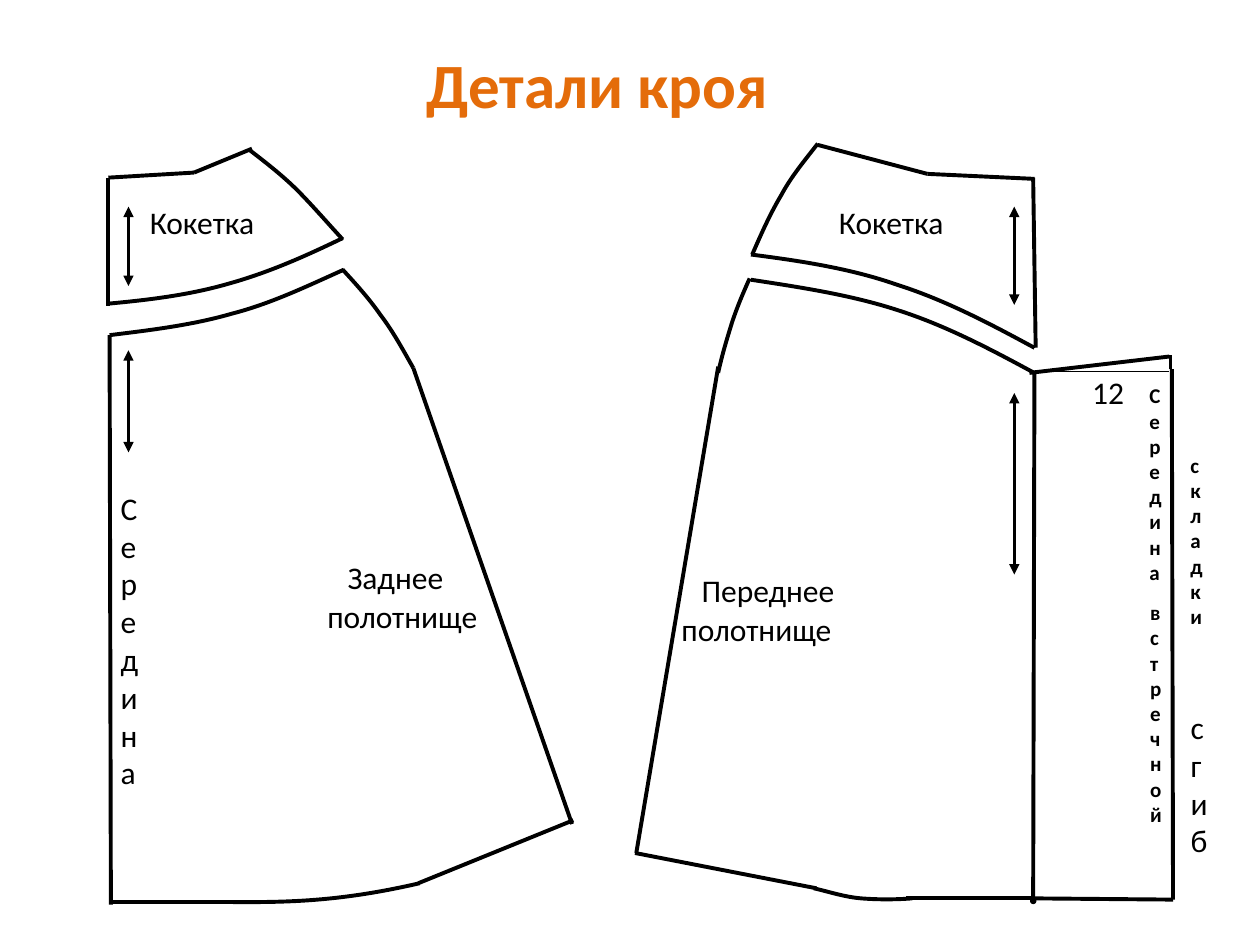
import math

from pptx import Presentation
from pptx import util as u
from pptx.dml.color import RGBColor
from pptx.enum import shapes, text
from pptx.oxml.ns import qn
from lxml import etree

BLACK = RGBColor(0, 0, 0)
ORANGE = RGBColor(0xE4, 0x6C, 0x0A)
BLUE = RGBColor(0x4F, 0x81, 0xBD)
FONT = "Calibri"

TITLE = ("Детали кроя", 3.27, 0.31, 2.94, 0.71)
BACK_PANEL_LINES = [
    (4.55, 6.51, 3.32, 7.01), (3.28, 2.92, 4.54, 6.54),
    (1.89, 7.16, 0.88, 7.16), (0.88, 7.18, 0.87, 2.66),
]
FRONT_PANEL_LINES = [
    (8.21, 2.96, 8.2, 7.15), (5.04, 6.77, 6.48, 7.05),
    (5.7, 2.91, 5.05, 6.77), (8.2, 7.13, 7.19, 7.13),
]
PLEAT_LINES = [
    (8.2, 7.13, 9.31, 7.14), (9.3, 2.93, 9.31, 7.14), (9.29, 2.93, 9.29, 2.82),
]
BACK_YOKE_LINES = [
    (1.54, 1.37, 2, 1.18), (0.86, 1.41, 1.54, 1.37), (0.86, 1.41, 0.86, 2.43),
]
FRONT_YOKE_LINES = [
    (8.2, 1.41, 8.22, 2.76), (7.36, 1.38, 8.21, 1.42), (6.49, 1.15, 7.36, 1.38),
]
OUTLINES = (BACK_PANEL_LINES + FRONT_PANEL_LINES + PLEAT_LINES
            + BACK_YOKE_LINES + FRONT_YOKE_LINES)
PLEAT_LEVEL = (8.16, 2.95, 9.28, 2.95)
PLEAT_TOP = [(8.17, 2.96), (9.28, 2.83)]
GRAIN_ARROWS = [
    (1.02, 2.27, 1.02, 1.64), (8.05, 2.42, 8.05, 1.64),
    (1.02, 3.59, 1.02, 2.78), (8.05, 4.56, 8.05, 3.12),
]
CURVES = {
    "back hem": (0, [(1.85, 7.16), (2.27, 7.16), (2.68, 7.16), (3.33, 7.01)]),
    "back hip": (340.2, [(2.72, 2.14), (2.83, 2.26), (2.93, 2.37), (3.02, 2.5),
                         (3.12, 2.63), (3.2, 2.78), (3.28, 2.92)]),
    "back panel top": (95.7, [(2.73, 2.14), (2.44, 2.27), (2.15, 2.41), (1.84, 2.49),
                              (1.53, 2.58), (1.2, 2.62), (0.87, 2.66)]),
    "back yoke side": (325.6, [(1.98, 1.19), (2.11, 1.29), (2.24, 1.39), (2.36, 1.51),
                               (2.48, 1.63), (2.6, 1.77), (2.72, 1.9)]),
    "back yoke base": (95.7, [(2.72, 1.89), (2.43, 2.03), (2.14, 2.16), (1.82, 2.25),
                              (1.51, 2.34), (1.19, 2.38), (0.86, 2.41)]),
    "front hip": (10.5, [(5.7, 2.96), (5.73, 2.82), (5.77, 2.69), (5.81, 2.56),
                         (5.85, 2.44), (5.9, 2.32), (5.95, 2.21)]),
    "front hem": (256.5, [(7.24, 7.13), (7.11, 7.14), (6.97, 7.14), (6.84, 7.13),
                          (6.71, 7.12), (6.59, 7.08), (6.46, 7.05)]),
    "front panel top": (311.5, [(5.96, 2.22), (6.35, 2.28), (6.75, 2.34), (7.12, 2.46),
                                (7.5, 2.58), (7.86, 2.77), (8.21, 2.96)]),
    "front yoke side": (12.7, [(5.97, 2.02), (6.04, 1.86), (6.11, 1.7), (6.2, 1.55),
                               (6.28, 1.4), (6.39, 1.27), (6.49, 1.14)]),
    "front yoke base": (311.5, [(5.96, 2.02), (6.35, 2.07), (6.75, 2.13), (7.12, 2.26),
                                (7.5, 2.38), (7.86, 2.57), (8.21, 2.76)]),
}
PLAIN = {"name": FONT, "size": u.Pt(18), "bold": False}
SMALL_BOLD = {"name": FONT, "size": u.Pt(12), "bold": True}
HEADING = {"name": FONT, "size": u.Pt(36), "bold": True}
LABELS = [
    ("Заднее", 2.66, 4.38, 1.02, 0.4, True, PLAIN),
    ("полотнище", 2.5, 4.69, 1.4, 0.4, False, PLAIN),
    ("\n".join("Середина"), 0.86, 3.83, 0.47, 3.43, True, PLAIN),
    ("Переднее", 5.47, 4.48, 1.4, 0.4, True, PLAIN),
    ("полотнище", 5.31, 4.79, 1.41, 0.4, True, PLAIN),
    ("12", 8.57, 2.91, 0.46, 0.4, False, PLAIN),
    ("сгиб", 9.35, 5.57, 0.31, 1.31, True, PLAIN),
    ("Середина", 9.03, 2.99, 0.19, 1.92, True, SMALL_BOLD),
    ("встречной", 9.03, 4.71, 0.23, 1.92, True, SMALL_BOLD),
    ("складки", 9.35, 3.54, 0.23, 1.51, True, SMALL_BOLD),
    ("Кокетка", 1.09, 1.56, 1.09, 0.4, True, PLAIN),
    ("Кокетка", 6.56, 1.56, 1.09, 0.4, True, PLAIN),
]


def inches(values):
    return [u.Inches(value) for value in values]


def set_stroke(shape, width=2.25):
    shape.line.color.rgb = BLACK
    shape.line.width = u.Pt(width)


def add_line(page, ends, width=2.25, arrows=False):
    line = page.shapes.add_connector(shapes.MSO_CONNECTOR.STRAIGHT, *inches(ends))
    set_stroke(line, width)
    if arrows:
        stroke = line.line._get_or_add_ln()
        for end in ("a:headEnd", "a:tailEnd"):
            etree.SubElement(stroke, qn(end), type="triangle")
    etree.SubElement(line._element.spPr, qn("a:effectLst"))


def add_path(page, points):
    start, *rest = [inches(point) for point in points]
    builder = page.shapes.build_freeform(*start)
    builder.add_line_segments(rest, close=False)
    outline = builder.convert_to_shape()
    outline.shadow.inherit = False
    outline.fill.background()
    set_stroke(outline)
    return outline


def turn_back(points, degrees):
    (x1, y1), (x2, y2) = points[0], points[-1]
    mid_x, mid_y = (x1 + x2) / 2, (y1 + y2) / 2
    cos, sin = math.cos(math.radians(degrees)), math.sin(math.radians(degrees))
    return [(mid_x + (x - mid_x) * cos + (y - mid_y) * sin,
             mid_y - (x - mid_x) * sin + (y - mid_y) * cos) for x, y in points]


def add_curve(page, degrees, controls):
    curve = add_path(page, turn_back(controls, degrees))
    steps = list(curve._element.iter(qn("a:lnTo")))
    for first in range(0, len(steps), 3):
        bezier = etree.Element(qn("a:cubicBezTo"))
        steps[first].addprevious(bezier)
        for step in steps[first:first + 3]:
            bezier.append(step[0])
            step.getparent().remove(step)
    curve.rotation = degrees


def write(box, words, wrap, style, color):
    frame = box.text_frame
    frame.text = words
    frame.word_wrap = wrap
    frame.auto_size = text.MSO_AUTO_SIZE.SHAPE_TO_FIT_TEXT
    frame.vertical_anchor = text.MSO_ANCHOR.TOP
    for para in frame.paragraphs:
        for span in para.runs:
            for key, value in style.items():
                setattr(span.font, key, value)
            span.font.color.rgb = color


def main():
    deck = Presentation()
    deck.slide_width, deck.slide_height = inches((10, 7.5))
    page = deck.slides.add_slide(deck.slide_layouts[5])

    for ends in OUTLINES:
        add_line(page, ends)
    add_line(page, PLEAT_LEVEL, width=0.75)
    add_path(page, PLEAT_TOP)
    for degrees, controls in CURVES.values():
        add_curve(page, degrees, controls)
    for ends in GRAIN_ARROWS:
        add_line(page, ends, width=1.5, arrows=True)

    dot = page.shapes.add_shape(shapes.MSO_SHAPE.OVAL, *inches((8.19, 7.14, 0.02, 0.02)))
    dot.shadow.inherit = False
    dot.fill.solid()
    dot.fill.fore_color.rgb = BLUE
    set_stroke(dot)

    for words, left, top, width, height, wrap, style in LABELS:
        box = page.shapes.add_textbox(*inches((left, top, width, height)))
        write(box, words, wrap, style, BLACK)

    title = page.shapes.title
    words, *place = TITLE
    title.left, title.top, title.width, title.height = inches(place)
    write(title, words, False, HEADING, ORANGE)
    title.text_frame.paragraphs[0].alignment = text.PP_ALIGN.CENTER
    deck.save("out.pptx")


if __name__ == "__main__":
    main()
